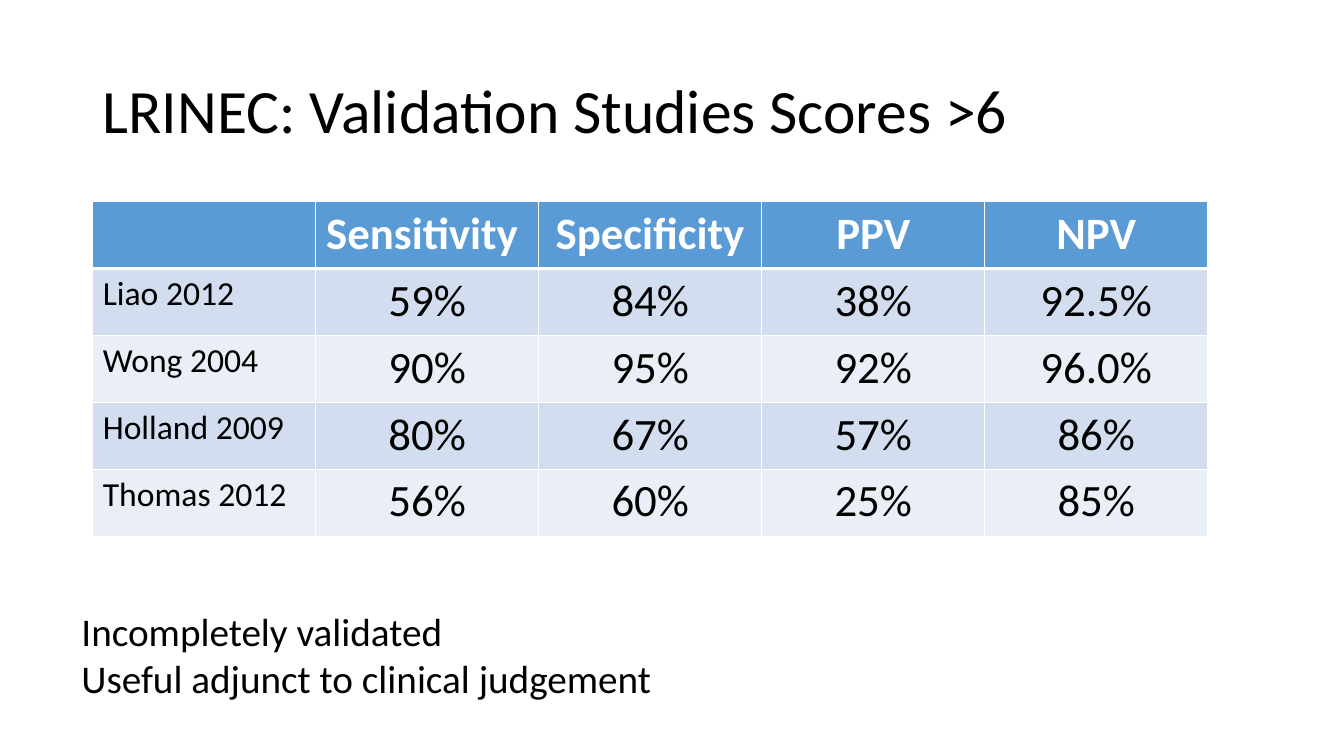
from lxml.etree import SubElement
from pptx import Presentation
from pptx.dml.color import RGBColor as RGB
from pptx.enum.text import MSO_ANCHOR as Anchor, PP_ALIGN as Align
from pptx.oxml.ns import qn
from pptx.util import Inches, Pt

COLORS = {
    "text": "000000",
    "white": "FFFFFF",
    "header": "5B9BD5",
    "odd_row": "D2DEEF",
    "even_row": "EAEFF7",
}
FONT = "Calibri"
TITLE = "LRINEC: Validation Studies Scores >6"
STUDIES = [
    ["", "Sensitivity ", "Specificity", "PPV", "NPV"],
    ["Liao 2012", "59%", "84%", "38%", "92.5%"],
    ["Wong 2004", "90%", "95%", "92%", "96.0%"],
    ["Holland 2009", "80%", "67%", "57%", "86%"],
    ["Thomas 2012", "56%", "60%", "25%", "85%"],
]
REMARKS = ["Incompletely validated", "Useful adjunct to clinical judgement"]


def style(para, size, color="text", bold=False, align=Align.LEFT):
    para.alignment = align
    para.font.name = FONT
    para.font.size = Pt(size)
    para.font.bold = bold
    para.font.color.rgb = RGB.from_string(COLORS[color])


def add_text(page, box, lines, size, anchor=Anchor.TOP, spacing=1.0):
    frame = page.shapes.add_textbox(*map(Inches, box)).text_frame
    frame.word_wrap = True
    frame.vertical_anchor = anchor
    frame.text = "\n".join(lines)
    for para in frame.paragraphs:
        style(para, size)
        para.line_spacing = spacing


def add_borders(cell, row):
    # The rule between the header and the body is heavier
    widths = {"L": 1, "R": 1, "T": 3 if row == 1 else 1, "B": 3 if row == 0 else 1}
    properties = cell._tc.get_or_add_tcPr()
    for side, width in widths.items():
        line = SubElement(properties, qn(f"a:ln{side}"), w=str(Pt(width)))
        fill = SubElement(line, qn("a:solidFill"))
        SubElement(fill, qn("a:srgbClr"), val=COLORS["white"])


def fill_cell(cell, text, row, column):
    header = row == 0
    add_borders(cell, row)
    color = "header" if header else "odd_row" if row % 2 else "even_row"
    cell.fill.solid()
    cell.fill.fore_color.rgb = RGB.from_string(COLORS[color])
    cell.text = text
    style(
        cell.text_frame.paragraphs[0],
        size=32 if column else 24,
        color="white" if header else "text",
        bold=header,
        align=Align.CENTER if column else Align.LEFT,
    )


def add_study_table(page, box):
    left, top, width, height = map(Inches, box)
    rows, columns = len(STUDIES), len(STUDIES[0])
    table = page.shapes.add_table(rows, columns, left, top, width, height).table
    for row, values in enumerate(STUDIES):
        for column, text in enumerate(values):
            fill_cell(table.cell(row, column), text, row, column)


def build_slide(deck):
    page = deck.slides.add_slide(deck.slide_layouts[6])
    # Title
    add_text(page, (0.92, 0.4, 11.5, 1.45), [TITLE], 44, Anchor.MIDDLE, 0.9)
    # Validation results by study
    add_study_table(page, (0.92, 2, 11.06, 3.32))
    # Closing remarks
    add_text(page, (0.71, 5.98, 6.67, 1.04), REMARKS, 28)


def main():
    deck = Presentation()
    deck.slide_width, deck.slide_height = Inches(13.33), Inches(7.5)
    build_slide(deck)
    deck.save("out.pptx")


if __name__ == "__main__":
    main()
